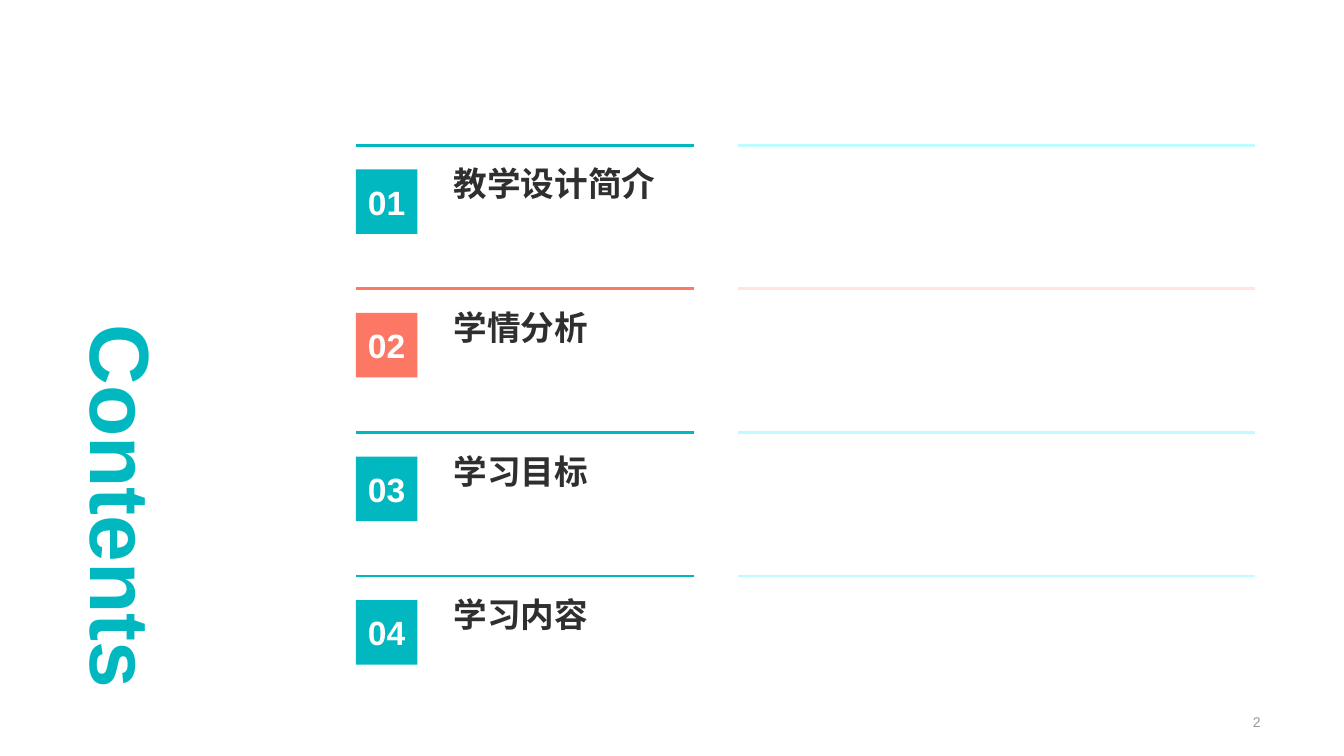
from lxml import etree
from pptx import Presentation
from pptx import util as u
from pptx.dml.color import RGBColor
from pptx.enum import lang, shapes, text
from pptx.oxml import ns

TEAL = RGBColor(0x01, 0xB8, 0xC1)
PALE_TEAL = RGBColor(0xC0, 0xFC, 0xFF)
CORAL = RGBColor(0xFD, 0x77, 0x65)
PALE_CORAL = RGBColor(0xFF, 0xE4, 0xE0)
INK = RGBColor(0x2F, 0x2F, 0x2F)
GREY = RGBColor(0x97, 0x97, 0x97)
WHITE = RGBColor(0xFF, 0xFF, 0xFF)

SLIDE_WIDTH, SLIDE_HEIGHT = 13.33, 7.5
AGENDA_BOX = (3.53, 1.44, 8.92, 5.7)
TITLE_BOX = (0.6, 3.1, 1.25, 3.86)
PAGE_NUMBER_BOX = (9.69, 7.04, 2.91, 0.24)
CHAPTERS = [
    ("教学设计简介", TEAL, PALE_TEAL),
    ("学情分析", CORAL, PALE_CORAL),
    ("学习目标", TEAL, PALE_TEAL),
    ("学习内容", TEAL, PALE_TEAL),
]


def inches(*lengths):
    """Convert lengths in inches to slide units."""
    return [u.Inches(length) for length in lengths]


def write(holder, wording, size, color, align, anchor, bold=True,
          side=0.12, edge=0.12, wrap=True, grow=True):
    """Fill a shape or text box with one formatted paragraph."""
    frame = holder.text_frame
    frame.text = wording
    frame.word_wrap = wrap
    frame.vertical_anchor = anchor
    frame.margin_left = frame.margin_right = u.Inches(side)
    frame.margin_top = frame.margin_bottom = u.Inches(edge)
    if grow:
        frame.auto_size = text.MSO_AUTO_SIZE.SHAPE_TO_FIT_TEXT
    paragraph = frame.paragraphs[0]
    paragraph.alignment = align
    font = paragraph.runs[0].font
    font.name, font.size, font.bold = "Arial", u.Pt(size), bold
    font.color.rgb = color
    font.language_id = lang.MSO_LANGUAGE_ID.SIMPLIFIED_CHINESE


def add_rule(slide, left, right, top, color):
    """Draw a flat horizontal rule."""
    rule = slide.shapes.add_connector(
        shapes.MSO_CONNECTOR.STRAIGHT, *inches(left, top, right, top))
    rule.line.color.rgb = color
    rule.line.width = u.Pt(2)
    etree.SubElement(rule._element.spPr, ns.qn("a:effectLst"))


def add_chapter(slide, box, number, name, color, pale):
    """Place one chapter: two rules, a number tile and its name."""
    left, top, width, _ = box
    add_rule(slide, left, left + 3.35, top, color)
    add_rule(slide, left + 3.79, left + width, top, pale)

    tile = slide.shapes.add_shape(
        shapes.MSO_SHAPE.RECTANGLE, *inches(left, top + 0.24, 0.61, 0.64))
    tile.shadow.inherit = False
    tile.fill.solid()
    tile.fill.fore_color.rgb = color
    tile.line.fill.background()
    write(tile, f"{number:02d}", 24, WHITE, text.PP_ALIGN.CENTER,
          text.MSO_ANCHOR.BOTTOM, side=0.05, wrap=False, grow=False)

    heading = slide.shapes.add_textbox(*inches(left + 0.85, top + 0.06, 2.73, 0.64))
    write(heading, name, 24, INK, text.PP_ALIGN.LEFT, text.MSO_ANCHOR.BOTTOM)


def add_agenda(slide, box):
    """Stack the chapters in equal rows."""
    left, top, width, height = box
    row = height / len(CHAPTERS)
    for index, (name, color, pale) in enumerate(CHAPTERS):
        add_chapter(slide, (left, top + index * row, width, row),
                    index + 1, name, color, pale)


def add_title(slide, box):
    """Set the slide title sideways in its box."""
    title = slide.shapes.add_textbox(*inches(*box))
    write(title, "Contents", 60, TEAL, text.PP_ALIGN.RIGHT, text.MSO_ANCHOR.TOP)
    title.text_frame._txBody.bodyPr.set("vert", "eaVert")


def add_page_number(slide, box):
    """Put the page number at the right of its box."""
    page_number = slide.shapes.add_textbox(*inches(*box))
    write(page_number, "2", 10, GREY, text.PP_ALIGN.RIGHT, text.MSO_ANCHOR.MIDDLE,
          bold=False, side=0.1, edge=0.05, grow=False)


def main():
    """Build the contents slide and save it."""
    deck = Presentation()
    deck.slide_width, deck.slide_height = inches(SLIDE_WIDTH, SLIDE_HEIGHT)
    slide = deck.slides.add_slide(deck.slide_layouts[6])
    add_page_number(slide, PAGE_NUMBER_BOX)
    add_title(slide, TITLE_BOX)
    add_agenda(slide, AGENDA_BOX)
    deck.save("out.pptx")


if __name__ == "__main__":
    main()
